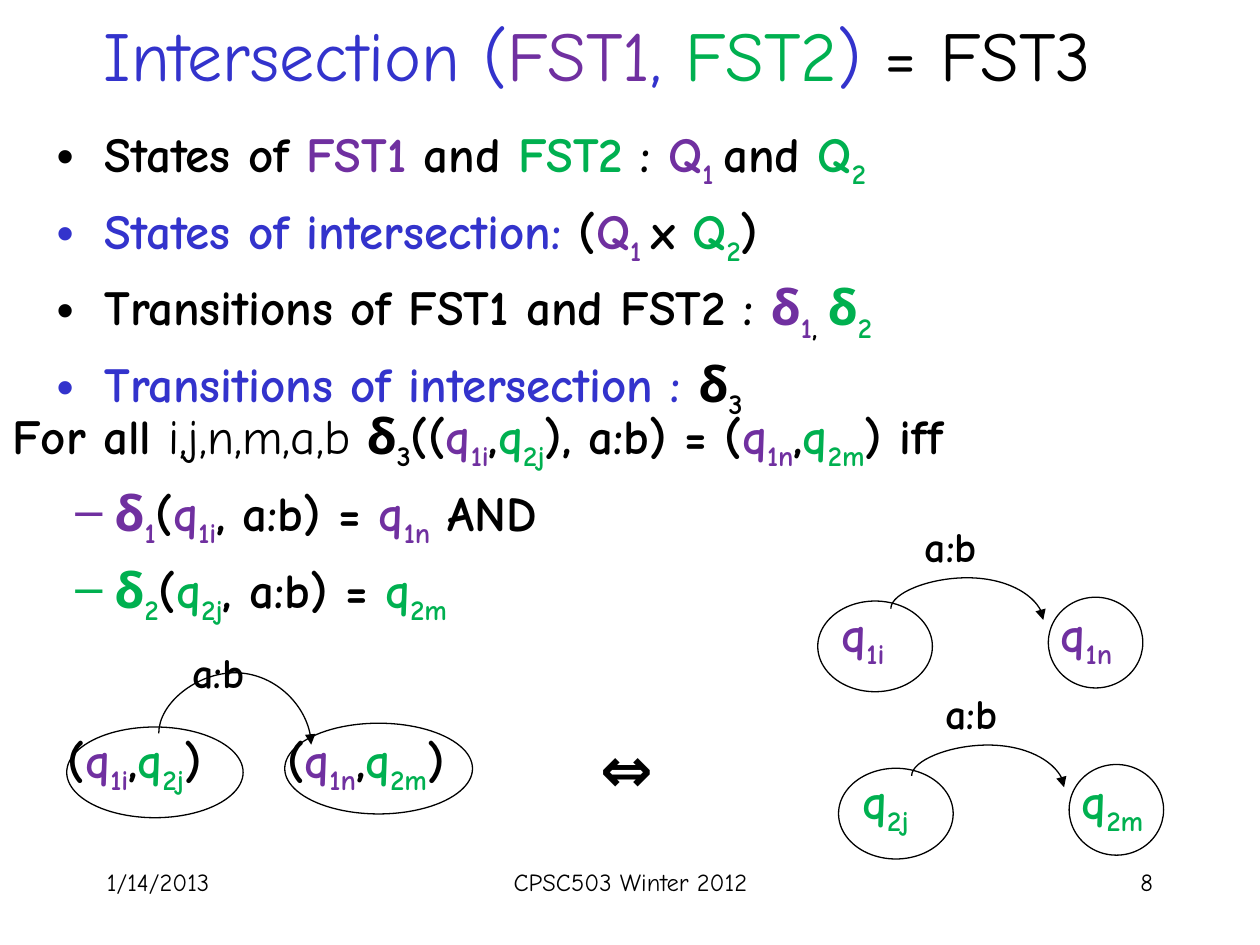
from pptx import Presentation
from pptx.dml.color import RGBColor
from pptx.enum.shapes import MSO_CONNECTOR, MSO_SHAPE
from pptx.enum.text import MSO_ANCHOR, MSO_AUTO_SIZE, PP_ALIGN
from pptx.oxml.ns import qn
from pptx.util import Inches, Pt
from lxml.etree import SubElement

FONT = "Comic Neue"
BLACK, BLUE, PURPLE, GREEN = "000000", "3333CC", "7030A0", "00B050"

# A run is (text, colour), optionally followed by its subscript.
Q1, Q2 = ("Q", PURPLE, "1 "), ("Q", GREEN, "2")
D1, D2, D3 = ("δ", PURPLE, "1"), ("δ", GREEN, "2"), ("δ", BLACK, "3")
Q1I, Q1N = ("q", PURPLE, "1i"), ("q", PURPLE, "1n")
Q2J, Q2M = ("q", GREEN, "2j"), ("q", GREEN, "2m")
OPEN, COMMA, CLOSE = ("(", BLACK), (",", BLACK), (")", BLACK)
ARGS = (", a:b) = ", BLACK)
FST1, FST2 = ("FST1", PURPLE), ("FST2", GREEN)

TITLE = [("Intersection (", BLUE), FST1, (", ", BLUE), FST2, (") ", BLUE), ("= FST3 ", BLACK)]
STATES = [
    [("States of ", BLACK), FST1, (" and ", BLACK), FST2, (" : ", BLACK), Q1, ("and ", BLACK), Q2],
    [("States of intersection: ", BLUE), OPEN, Q1, ("x ", BLACK), Q2, CLOSE],
    [("Transitions of FST1 and FST2 : ", BLACK), D1, ("", BLACK, ", "), D2],
    [("Transitions of intersection : ", BLUE), D3],
]
RULE = [("For all ", BLACK), ("i,j,n,m,a,b ", BLACK), D3, ("((", BLACK), Q1I, COMMA, Q2J,
        ("), a:b) = (", BLACK), Q1N, COMMA, Q2M, (") iff", BLACK)]
CONDITIONS = [[D1, OPEN, Q1I, ARGS, Q1N, (" AND", BLACK)], [D2, OPEN, Q2J, ARGS, Q2M]]
FOOTERS = [("1/14/2013", 7.5, 20.8, PP_ALIGN.LEFT),
           ("CPSC503 Winter 2012", 34.2, 31.7, PP_ALIGN.CENTER),
           ("8", 71.7, 20.8, PP_ALIGN.RIGHT)]
MACHINES = [(0, 0, Q1I, Q1N), (1.65, 17.7, Q2J, Q2M)]

prs = Presentation()
prs.slide_width, prs.slide_height = Inches(10), Inches(7.5)
s = prs.slides.add_slide(prs.slide_layouts[1])


def X(share):
    return int(prs.slide_width * share / 100)


def Y(share):
    return int(prs.slide_height * share / 100)


def place(x, y, w, h):
    return X(x), Y(y), X(w), Y(h)


def rgb(color):
    return RGBColor.from_string(color)


def add_run(p, text, color, size, bold, sub=False):
    r = p.add_run()
    r.text = text
    f = r.font
    f.name, f.size, f.bold = FONT, Pt(size), bold
    f.color.rgb = rgb(color)
    if sub:
        f._element.set("baseline", "-25000")


def write(p, runs, size=28, bold=True):
    for text, color, *sub in runs:
        if text:
            add_run(p, text, color, size, bold)
        for t in sub:
            add_run(p, t, color, size, bold, True)


def indent(p, left, hang, bullet=None):
    pPr = p._p.get_or_add_pPr()
    pPr.set("marL", str(Inches(left)))
    pPr.set("indent", str(-Inches(hang)))
    if bullet:
        SubElement(pPr, qn("a:buChar")).set("char", bullet)


def textbox(box, runs, size=28, bold=True, align=PP_ALIGN.LEFT, hanging=False):
    tf = s.shapes.add_textbox(*place(*box)).text_frame
    tf.word_wrap = True
    p = tf.paragraphs[0]
    p.alignment = align
    if hanging:
        indent(p, 0.38, 0.38)
    write(p, runs, size, bold)
    return tf


def fill_placeholder(shape, box, anchor):
    shape.left, shape.top, shape.width, shape.height = place(*box)
    tf = shape.text_frame
    tf.auto_size, tf.vertical_anchor = MSO_AUTO_SIZE.NONE, anchor
    return tf


def state(box):
    sp = s.shapes.add_shape(MSO_SHAPE.OVAL, *place(*box))
    sp.shadow.inherit = False
    sp.fill.background()
    sp.line.color.rgb = rgb(BLACK)
    sp.line.width = Pt(0.75)


def arc(x, y, rise, span=12.1, drop=1.2):
    w, h = Y(drop), X(span)
    left, top = X(x) + (h - w) // 2, Y(y) + (w - h) // 2
    c = s.shapes.add_connector(MSO_CONNECTOR.CURVE, left, top, left + w, top + h)
    c.line.color.rgb = rgb(BLACK)
    c.line.width = Pt(0.75)
    spPr = c._element.spPr
    xfrm = spPr.find(qn("a:xfrm"))
    xfrm.set("rot", "5400000")
    xfrm.set("flipV", "1")
    gd = SubElement(spPr.find(qn("a:prstGeom")).find(qn("a:avLst")), qn("a:gd"))
    gd.set("name", "adj1")
    gd.set("fmla", f"val {-round(rise / drop * 100000)}")
    SubElement(spPr.find(qn("a:ln")), qn("a:tailEnd")).set("type", "triangle")
    SubElement(spPr, qn("a:effectLst"))


def label(x, y, text="a:b", size=24, h=6.67):
    textbox((x, y, 9.9, h), [(text, BLACK)], size)


for text, x, w, align in FOOTERS:
    textbox((x, 91.07, w, 6.67), [(text, BLACK)], 14, False, align)

tf = fill_placeholder(s.shapes.title, (0, 0, 96.7, 11.33), MSO_ANCHOR.MIDDLE)
tf.paragraphs[0].alignment = PP_ALIGN.CENTER
write(tf.paragraphs[0], TITLE, 40, False)

tf = fill_placeholder(s.placeholders[1], (3.5, 12.4, 85, 28.67), MSO_ANCHOR.TOP)
for i, runs in enumerate(STATES):
    p = tf.add_paragraph() if i else tf.paragraphs[0]
    indent(p, 0.38, 0.38, "•")
    p.space_before = Pt(5.6 if i else 0)
    write(p, runs)

tf = textbox((0, 42.27, 100, 26.53), RULE, hanging=True)
tf.paragraphs[0].runs[1].font.bold = False
for runs in CONDITIONS:
    p = tf.add_paragraph()
    p.level = 1
    indent(p, 0.81, 0.31, "–")
    p.space_before = Pt(5.6)
    write(p, runs)

state((5.3, 76.93, 14, 9.6))
state((22.6, 76.53, 14.9, 9.6))
arc(12.6, 77.6, 6.4)
textbox((4.4, 76.53, 17.4, 10), [OPEN, Q1I, COMMA, Q2J, CLOSE], hanging=True)
textbox((21.8, 76.53, 18.3, 8.8), [OPEN, Q1N, COMMA, Q2M, CLOSE], hanging=True)
label(14.3, 67.73)
label(46.7, 76.53, "⇔", 36, 9.33)

for dx, dy, source, target in MACHINES:
    state((64.9 + dx, 63.6 + dy, 9.1, 9.6))
    state((83.2 + dx, 63.2 + dy, 7.5, 9.6))
    arc(70.7 + dx, 64.4 + dy, 3.26)
    label(72.4 + dx, 54.4 + dy)
    textbox((65.8 + dx, 63.2 + dy, 10, 7.73), [source], hanging=True)
    textbox((83.2 + dx, 63.2 + dy, 9.1, 8.8), [target], hanging=True)

prs.save("out.pptx")
